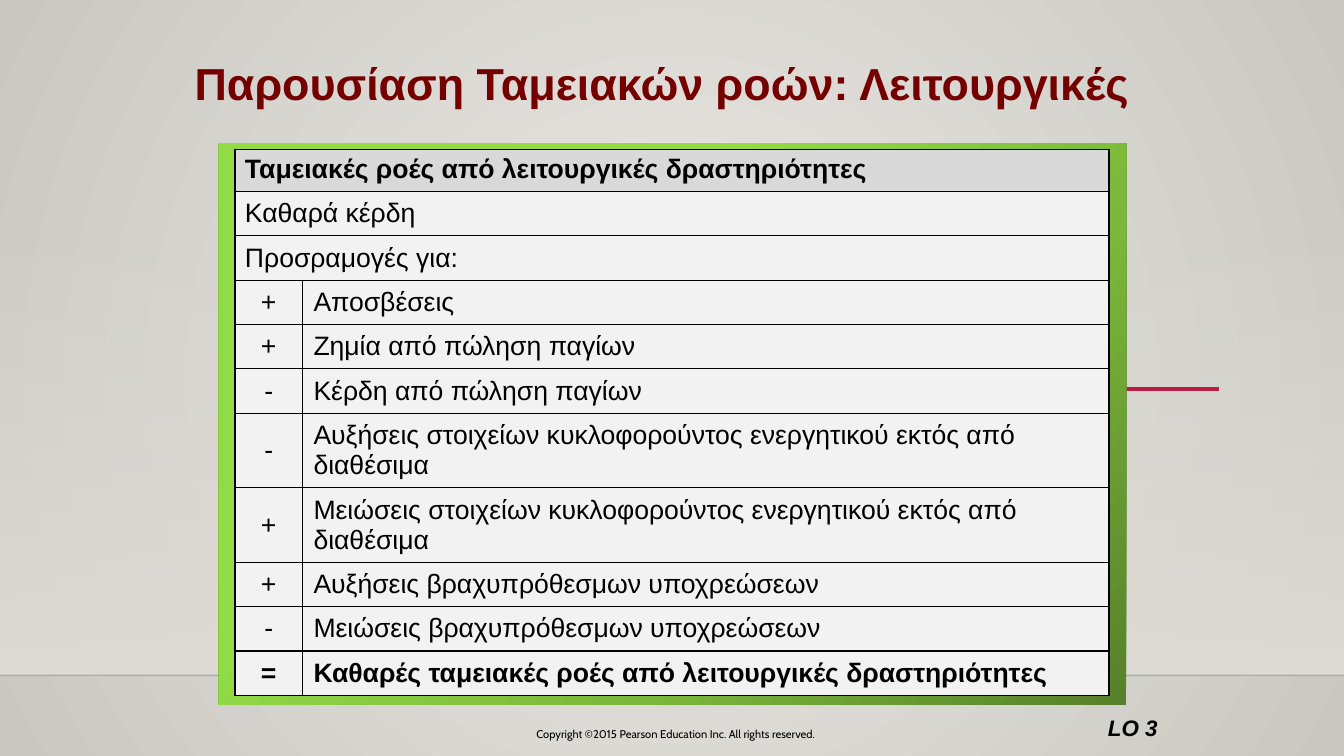
from lxml import etree
from pptx import Presentation
from pptx.dml.color import RGBColor
from pptx.enum.shapes import MSO_CONNECTOR, MSO_SHAPE
from pptx.enum.text import MSO_ANCHOR, PP_ALIGN
from pptx.oxml.ns import qn
from pptx.util import Inches, Pt

LEFT, CENTER, RIGHT = PP_ALIGN.LEFT, PP_ALIGN.CENTER, PP_ALIGN.RIGHT
TOP, MIDDLE = MSO_ANCHOR.TOP, MSO_ANCHOR.MIDDLE

TITLE = "Παρουσίαση Ταμειακών ροών: Λειτουργικές"
OBJECTIVE = "LO 3"
COPYRIGHT = "Copyright ©2015 Pearson Education Inc. All rights reserved."
HEADER = "Ταμειακές ροές από λειτουργικές δραστηριότητες"
# (sign, item); a row without a sign spans both columns
CASH_FLOWS = [
    (None, HEADER),
    (None, "Καθαρά κέρδη"),
    (None, "Προσραμογές για:"),
    ("+", "Αποσβέσεις"),
    ("+", "Ζημία από πώληση παγίων"),
    ("-", "Κέρδη από πώληση παγίων"),
    ("-", "Αυξήσεις στοιχείων κυκλοφορούντος ενεργητικού εκτός από διαθέσιμα"),
    ("+", "Μειώσεις στοιχείων κυκλοφορούντος ενεργητικού εκτός από διαθέσιμα"),
    ("+", "Αυξήσεις βραχυπρόθεσμων υποχρεώσεων"),
    ("-", "Μειώσεις βραχυπρόθεσμων υποχρεώσεων"),
    ("=", "Καθαρές ταμειακές ροές από λειτουργικές δραστηριότητες"),
]
COLUMN_WIDTHS = (0.67, 8)
HEADER_HEIGHT, ROW_HEIGHT, TWO_LINE_HEIGHT = 0.42, 0.44, 0.74
ONE_LINE_CHARS = 60

THEME = {
    "font": "Arial", "copyright_font": "Cabin",
    "title_size": 32, "table_size": 19, "objective_size": 16, "copyright_size": 8,
    "title": "740000", "text": "000000", "accent": "B71E42", "floor_line": "000001",
    "header_fill": "D9D9D9", "row_fill": "F2F2F2", "border": "000000",
    # gradient stops: position, colour, opacity (all in percent)
    "backdrop": [(0, "ECEAE7", 100), (100, "CAC7C1", 100)],
    "floor": [(0, "DFDBD5", 0), (100, "DFDBD5", 100)],
    "panel": [(0, "57812A", 100), (33, "7BB73B", 100), (65, "92DA46", 100)],
}


def add(parent, tag, **attrs):
    return etree.SubElement(parent, qn(tag), {k: str(v) for k, v in attrs.items()})


def add_color(parent, color, opacity=100):
    clr = add(parent, "a:srgbClr", val=color)
    if opacity < 100:
        add(clr, "a:alpha", val=opacity * 1000)


def set_gradient(owner, fill, stops, angle=None):
    """Give fill the stops; without an angle the gradient is circular."""
    fill.gradient()
    grad = owner.element.find(".//" + qn("a:gradFill"))
    for child in list(grad):
        grad.remove(child)
    stop_list = add(grad, "a:gsLst")
    for position, color, opacity in stops:
        add_color(add(stop_list, "a:gs", pos=position * 1000), color, opacity)
    if angle is None:
        path = add(grad, "a:path", path="circle")
        add(path, "a:fillToRect", l=50000, t=50000, r=50000, b=50000)
    else:
        add(grad, "a:lin", ang=angle * 60000, scaled=0)


def write(tf, text, size, color=THEME["text"], font=THEME["font"],
          bold=False, italic=False, align=LEFT):
    p = tf.paragraphs[0]
    p.alignment = align
    r = p.add_run()
    r.text = text
    r.font.size, r.font.name = Pt(size), font
    r.font.bold, r.font.italic = bold, italic
    r.font.color.rgb = RGBColor.from_string(color)


def add_text(s, text, box, **style):
    tf = s.shapes.add_textbox(*map(Inches, box)).text_frame
    tf.word_wrap = True
    write(tf, text, **style)


def add_panel(s, box, stops, angle):
    sp = s.shapes.add_shape(MSO_SHAPE.RECTANGLE, *map(Inches, box))
    sp.shadow.inherit = False
    sp.line.fill.background()
    set_gradient(sp, sp.fill, stops, angle)


def add_rule(s, x1, x2, y, color, width, opacity=100):
    line = s.shapes.add_connector(MSO_CONNECTOR.STRAIGHT, *map(Inches, (x1, y, x2, y)))
    line.line.width = Pt(width)
    line.line.color.rgb = RGBColor.from_string(color)
    if opacity < 100:
        add(line.element.find(".//" + qn("a:srgbClr")), "a:alpha", val=opacity * 1000)
    add(line.element.spPr, "a:effectLst")


def format_cell(cell, fill):
    """Fill the cell and draw its four borders, which must precede the fill."""
    cell.fill.solid()
    cell.fill.fore_color.rgb = RGBColor.from_string(fill)
    tc_pr = cell.fill._xPr
    for i, side in enumerate(("a:lnL", "a:lnR", "a:lnT", "a:lnB")):
        ln = add(tc_pr, side, w=Pt(1))
        add_color(add(ln, "a:solidFill"), THEME["border"])
        tc_pr.insert(i, ln)


def row_height(index, item):
    if index == 0:
        return HEADER_HEIGHT
    return TWO_LINE_HEIGHT if len(item) > ONE_LINE_CHARS else ROW_HEIGHT


def add_cash_flow_table(s, left, top):
    heights = [row_height(i, item) for i, (_, item) in enumerate(CASH_FLOWS)]
    frame = s.shapes.add_table(len(CASH_FLOWS), len(COLUMN_WIDTHS), Inches(left), Inches(top),
                               Inches(sum(COLUMN_WIDTHS)), Inches(sum(heights)))
    table = frame.table
    table.first_row = table.horz_banding = False
    for column, width in zip(table.columns, COLUMN_WIDTHS):
        column.width = Inches(width)
    last = len(CASH_FLOWS) - 1
    for i, (sign, item) in enumerate(CASH_FLOWS):
        table.rows[i].height = Inches(heights[i])
        sign_cell, item_cell = table.cell(i, 0), table.cell(i, 1)
        for cell in (sign_cell, item_cell):
            format_cell(cell, THEME["row_fill"] if i else THEME["header_fill"])
            cell.vertical_anchor = MIDDLE if i else TOP
        style = {"size": THEME["table_size"], "bold": i in (0, last)}
        if sign is None:
            sign_cell.merge(item_cell)
            write(sign_cell.text_frame, item, **style)
        else:
            write(sign_cell.text_frame, sign, align=CENTER, **style)
            item_cell.margin_left = Inches(0.11)
            write(item_cell.text_frame, item, **style)


def main():
    prs = Presentation()
    prs.slide_width, prs.slide_height = Inches(13.33), Inches(7.5)
    s = prs.slides.add_slide(prs.slide_layouts[5])
    set_gradient(s, s.background.fill, THEME["backdrop"])

    add_panel(s, (0, 2.21, 13.33, 4.49), THEME["floor"], 90)
    add_rule(s, 0, 13.33, 6.7, THEME["floor_line"], 1, opacity=20)
    add_rule(s, 2.64, 12.09, 3.86, THEME["accent"], 2.5)
    add_text(s, OBJECTIVE, (10.75, 7.04, 0.83, 0.37), size=THEME["objective_size"],
             bold=True, italic=True, align=RIGHT)
    add_panel(s, (2.17, 1.42, 9, 5.57), THEME["panel"], 225)
    add_cash_flow_table(s, 2.33, 1.48)

    title = s.shapes.title
    title.left, title.top, title.width, title.height = map(Inches, (1.83, 0.5, 9.83, 0.64))
    title.text_frame.vertical_anchor = TOP
    write(title.text_frame, TITLE, THEME["title_size"], color=THEME["title"], bold=True)
    add_text(s, COPYRIGHT, (4.33, 7.17, 4.75, 0.25), size=THEME["copyright_size"],
             font=THEME["copyright_font"], align=CENTER)
    prs.save("out.pptx")


if __name__ == "__main__":
    main()
